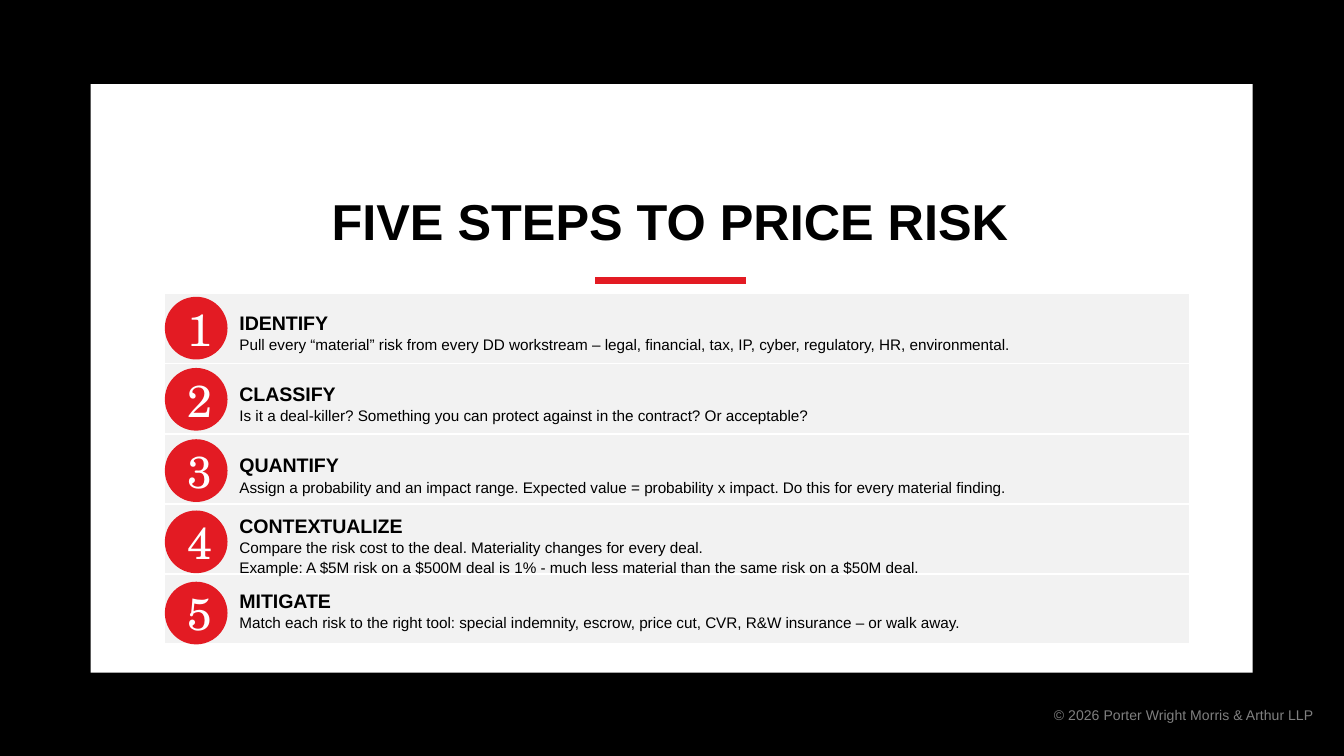
from lxml import etree
from pptx import Presentation
from pptx import util as u
from pptx.dml.color import RGBColor
from pptx.enum import shapes, text
from pptx.oxml.ns import qn

BLACK = RGBColor(0x00, 0x00, 0x00)
WHITE = RGBColor(0xFF, 0xFF, 0xFF)
RED = RGBColor(0xE3, 0x1B, 0x23)
PALE = RGBColor(0xF2, 0xF2, 0xF2)
GREY = RGBColor(0x80, 0x80, 0x80)

# Heading, explanation, and how far the text is raised from its regular place
STEPS = [
    ("IDENTIFY", "Pull every “material” risk from every DD workstream – legal, financial, "
     "tax, IP, cyber, regulatory, HR, environmental.", 0),
    ("CLASSIFY", "Is it a deal-killer? Something you can protect against in the contract? "
     "Or acceptable?", 0),
    ("QUANTIFY", "Assign a probability and an impact range. Expected value = probability x "
     "impact. Do this for every material finding.", 0),
    ("CONTEXTUALIZE", "Compare the risk cost to the deal. Materiality changes for every deal.\n"
     "Example: A $5M risk on a $500M deal is 1% - much less material than the same risk on "
     "a $50M deal.", 5.8),
    ("MITIGATE", "Match each risk to the right tool: special indemnity, escrow, price cut, "
     "CVR, R&W insurance – or walk away.", 3.6),
]
STEP_PITCH = 38.16


class SlideBuilder:
    BODY_FONT = "Arial"
    NUMBER_FONT = "TeX Gyre Schola"

    def __init__(self, slide):
        self.slide = slide

    def style(self, paragraph, size, color=BLACK, bold=False, align=None, font=BODY_FONT):
        paragraph.font.name = font
        paragraph.font.size = u.Pt(size)
        paragraph.font.bold = bold
        paragraph.font.color.rgb = color
        if align is not None:
            paragraph.alignment = align

    def background(self, color):
        fill = self.slide.background.fill
        fill.solid()
        fill.fore_color.rgb = color

    def shape(self, kind, left, top, width, height, color):
        shape = self.slide.shapes.add_shape(
            kind, u.Pt(left), u.Pt(top), u.Pt(width), u.Pt(height))
        shape.shadow.inherit = False
        shape.fill.solid()
        shape.fill.fore_color.rgb = color
        shape.line.fill.background()
        return shape

    def rule(self, left, right, y, color, weight):
        line = self.slide.shapes.add_connector(
            shapes.MSO_CONNECTOR.STRAIGHT, u.Pt(left), u.Pt(y), u.Pt(right), u.Pt(y))
        line.line.color.rgb = color
        line.line.width = u.Pt(weight)
        etree.SubElement(line._element.spPr, qn("a:effectLst"))

    def title(self, words, left, top, width, height):
        title = self.slide.shapes.title
        title.left, title.top = u.Pt(left), u.Pt(top)
        title.width, title.height = u.Pt(width), u.Pt(height)
        # Bring the title in front of the panel
        self.slide.shapes._spTree.append(title._element)
        frame = title.text_frame
        frame.text = words
        frame.vertical_anchor = text.MSO_ANCHOR.BOTTOM
        heading = frame.paragraphs[0]
        heading.line_spacing = 0.9
        self.style(heading, 27, bold=True, align=text.PP_ALIGN.CENTER)

    def textbox(self, left, top, width, height):
        frame = self.slide.shapes.add_textbox(
            u.Pt(left), u.Pt(top), u.Pt(width), u.Pt(height)).text_frame
        frame.word_wrap = True
        return frame

    def bands(self, left, top, width, row_height, count):
        graphic = self.slide.shapes.add_table(
            count, 1, u.Pt(left), u.Pt(top), u.Pt(width), u.Pt(row_height * count))
        table = graphic.table
        table.first_row = table.horz_banding = False
        for row in table.rows:
            row.height = u.Pt(row_height)
            cell = row.cells[0]
            properties = cell._tc.get_or_add_tcPr()
            for side in ("a:lnL", "a:lnR", "a:lnT", "a:lnB"):
                border = etree.SubElement(properties, qn(side), w=str(u.Pt(1)))
                solid = etree.SubElement(border, qn("a:solidFill"))
                etree.SubElement(solid, qn("a:srgbClr"), val=str(WHITE))
            cell.fill.solid()
            cell.fill.fore_color.rgb = PALE

    def number(self, value, left, top, diameter):
        circle = self.shape(shapes.MSO_SHAPE.OVAL, left, top, diameter, diameter, RED)
        frame = circle.text_frame
        frame.text = str(value)
        frame.vertical_anchor = text.MSO_ANCHOR.MIDDLE
        self.style(frame.paragraphs[0], 24, WHITE, align=text.PP_ALIGN.CENTER,
                   font=self.NUMBER_FONT)

    def step(self, heading, explanation, left, top):
        frame = self.textbox(left, top, 525.6, 26.6)
        lines = frame.paragraphs[0], frame.add_paragraph()
        for line, words, size in zip(lines, (heading, explanation), (10.5, 8.2)):
            line.text = words
            line.line_spacing = 1.07
            self.style(line, size, bold=words == heading)

    def copyright(self, words):
        frame = self.textbox(467.3, 360.7, 243.4, 44.3)
        frame.text = words
        frame.vertical_anchor = text.MSO_ANCHOR.MIDDLE
        self.style(frame.paragraphs[0], 7.5, GREY, align=text.PP_ALIGN.RIGHT)


def main():
    deck = Presentation()
    deck.slide_width, deck.slide_height = u.Pt(720), u.Pt(405)
    builder = SlideBuilder(deck.slides.add_slide(deck.slide_layouts[5]))

    # White panel on black, with the copyright line below
    builder.background(BLACK)
    builder.shape(shapes.MSO_SHAPE.RECTANGLE, 48.6, 45, 622.4, 315.4, WHITE)
    builder.copyright("© 2026 Porter Wright Morris & Arthur LLP")

    # Title and its red rule
    builder.title("FIVE STEPS TO PRICE RISK", 56.2, 53.3, 605.5, 85)
    builder.rule(318.8, 399.6, 150.2, RED, 4)

    # Grey bands, then the numbered steps over them
    builder.bands(88.2, 157.2, 549.2, 37.6, len(STEPS))
    for index, (heading, explanation, lift) in enumerate(STEPS):
        top = 159 + index * STEP_PITCH
        builder.number(index + 1, 88.3, top, 33.6)
        builder.step(heading, explanation, 121.2, top + 3 - lift)

    deck.save("out.pptx")


if __name__ == "__main__":
    main()
